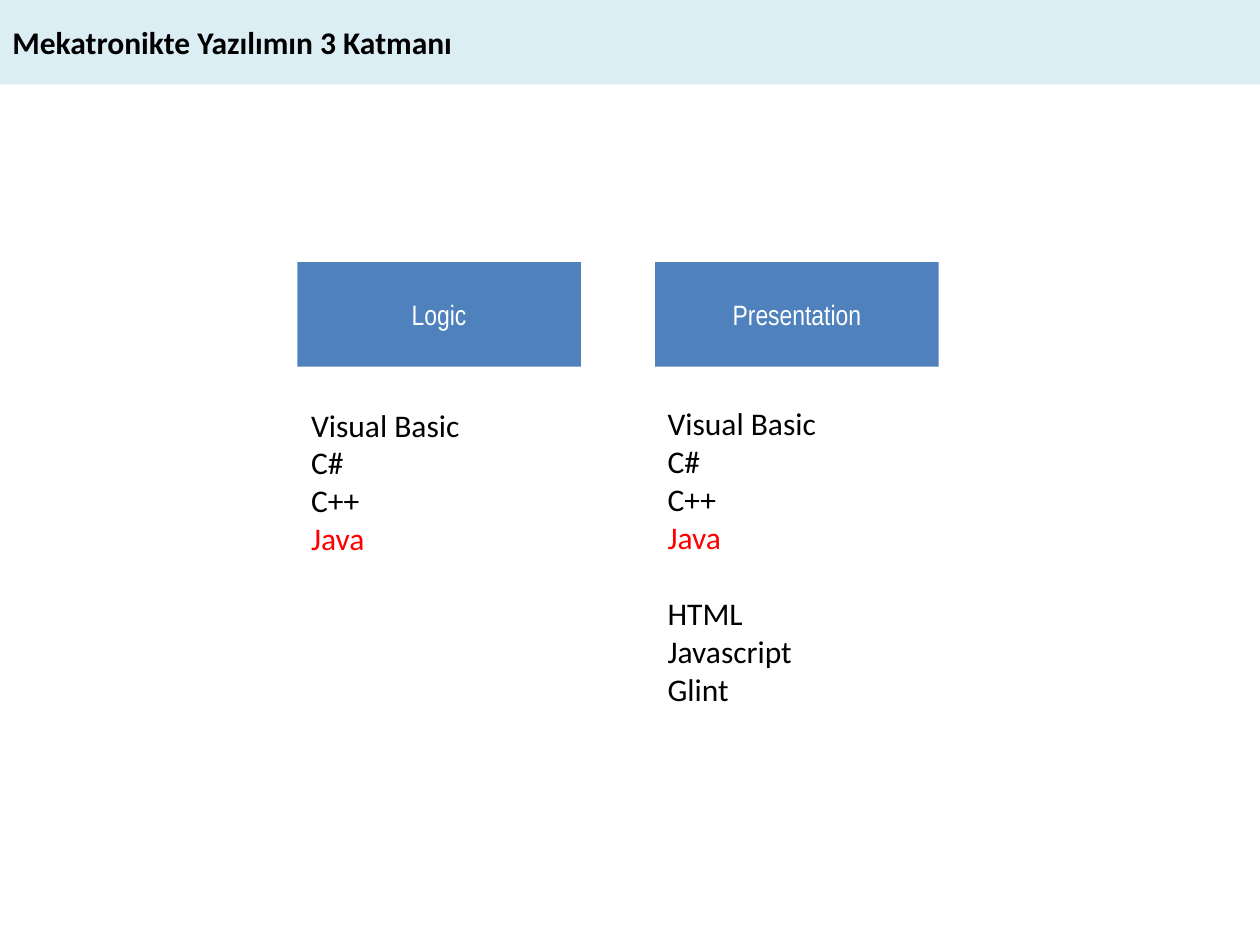
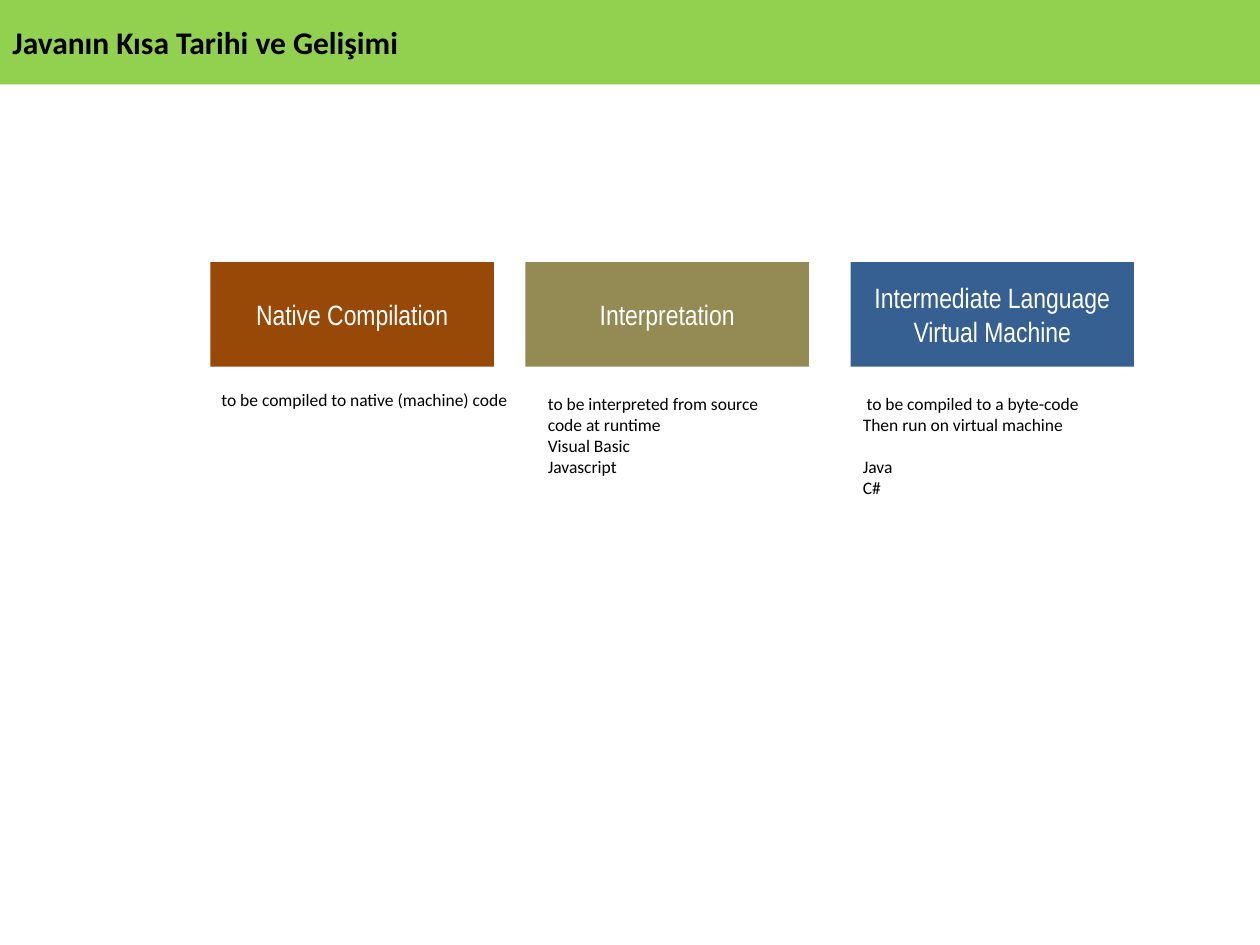
from pptx import Presentation
from pptx.dml.color import RGBColor
from pptx.enum.shapes import MSO_SHAPE
from pptx.enum.text import MSO_ANCHOR, PP_ALIGN
from pptx.util import Inches, Pt

RECTANGLE = MSO_SHAPE.RECTANGLE
MIDDLE = MSO_ANCHOR.MIDDLE
LEFT, CENTER = PP_ALIGN.LEFT, PP_ALIGN.CENTER

COLORS = {
    "black": "000000", "white": "FFFFFF", "red": "FF0000",
    "pale blue": "DBEEF4", "green": "92D050", "blue": "4F81BD",
    "brown": "984807", "olive": "948A54", "navy": "376092",
}
BODY_FONT, BOX_FONT = "Calibri", "Arial Narrow"
SLIDE_WIDTH, SLIDE_HEIGHT, BAND_HEIGHT = 10, 7.5, 0.67
BOX_TOP, BOX_WIDTH, BOX_HEIGHT = 2.08, 2.25, 0.83
LINE_HEIGHT = 1.22  # Calibri line height, as a share of the font size
FIRST_LINE_INDENT = 0.03

# Each note is a list of groups of lines; groups stand one line apart.
LANGUAGES = ["Visual Basic", "C#", "C++", "Java"]
SLIDES = [
    {
        "title": "Mekatronikte Yazılımın 3 Katmanı",
        "band": "pale blue", "note size": 18, "highlight": "Java",
        "columns": [
            {"left": 2.36, "color": "blue", "heading": ["Logic"],
             "note at": (2.37, 3.17, 1.39, 1.62), "note": [LANGUAGES]},
            {"left": 5.2, "color": "blue", "heading": ["Presentation"],
             "note at": (5.2, 3.16, 1.39, 2.83),
             "note": [LANGUAGES, ["HTML", "Javascript", "Glint"]]},
        ],
    },
    {
        "title": "Javanın Kısa Tarihi ve Gelişimi",
        "band": "green", "note size": 10, "highlight": None,
        "columns": [
            {"left": 1.67, "color": "brown", "heading": ["Native Compilation"],
             "note at": (1.63, 3.04, 2.5, 0.44), "indented": True,
             "note": [["to be compiled to native (machine) code"]]},
            {"left": 4.17, "color": "olive", "heading": ["Interpretation"],
             "note at": (4.25, 3.07, 2.1, 0.77),
             "note": [["to be interpreted from source code at runtime",
                       "Visual Basic", "Javascript"]]},
            {"left": 6.75, "color": "navy",
             "heading": ["Intermediate Language", "Virtual Machine"],
             "note at": (6.75, 3.07, 2.17, 0.94), "indented": True,
             "note": [["to be compiled to a byte-code",
                       "Then run on virtual machine"], ["Java", "C#"]]},
        ],
    },
]


def rgb(name):
    return RGBColor.from_string(COLORS[name])


def write_lines(frame, lines, font, size, color, align=LEFT, bold=False):
    """Write one paragraph per line and return the paragraphs."""
    frame.word_wrap = True
    frame.text = "\n".join(lines)
    for paragraph in frame.paragraphs:
        paragraph.alignment = align
        paragraph.font.name = font
        paragraph.font.size = Pt(size)
        paragraph.font.bold = bold
        paragraph.font.color.rgb = rgb(color)
    return frame.paragraphs


def add_rectangle(slide, place, fill):
    shape = slide.shapes.add_shape(RECTANGLE, *map(Inches, place))
    shape.shadow.inherit = False
    shape.fill.solid()
    shape.fill.fore_color.rgb = rgb(fill)
    shape.line.fill.background()
    shape.text_frame.vertical_anchor = MIDDLE
    return shape.text_frame


def add_note(slide, column, size, highlight):
    box = slide.shapes.add_textbox(*map(Inches, column["note at"]))
    groups = column["note"]
    lines = [line for group in groups for line in group]
    paragraphs = write_lines(box.text_frame, lines, BODY_FONT, size, "black")
    for paragraph in paragraphs:
        if paragraph.text == highlight:
            paragraph.font.color.rgb = rgb("red")
    start = 0
    for group in groups[:-1]:
        start += len(group)
        paragraphs[start].space_before = Pt(size * LINE_HEIGHT)
    if column.get("indented"):
        properties = paragraphs[0]._p.get_or_add_pPr()
        properties.set("indent", str(Inches(FIRST_LINE_INDENT)))


def add_slide(presentation, content):
    slide = presentation.slides.add_slide(presentation.slide_layouts[6])
    for column in content["columns"]:
        place = (column["left"], BOX_TOP, BOX_WIDTH, BOX_HEIGHT)
        frame = add_rectangle(slide, place, column["color"])
        write_lines(frame, column["heading"], BOX_FONT, 16, "white", CENTER)
        add_note(slide, column, content["note size"], content["highlight"])
    band = add_rectangle(slide, (0, 0, SLIDE_WIDTH, BAND_HEIGHT), content["band"])
    write_lines(band, [content["title"]], BODY_FONT, 18, "black", bold=True)


def main():
    presentation = Presentation()
    presentation.slide_width = Inches(SLIDE_WIDTH)
    presentation.slide_height = Inches(SLIDE_HEIGHT)
    for content in SLIDES:
        add_slide(presentation, content)
    presentation.save("out.pptx")


if __name__ == "__main__":
    main()
